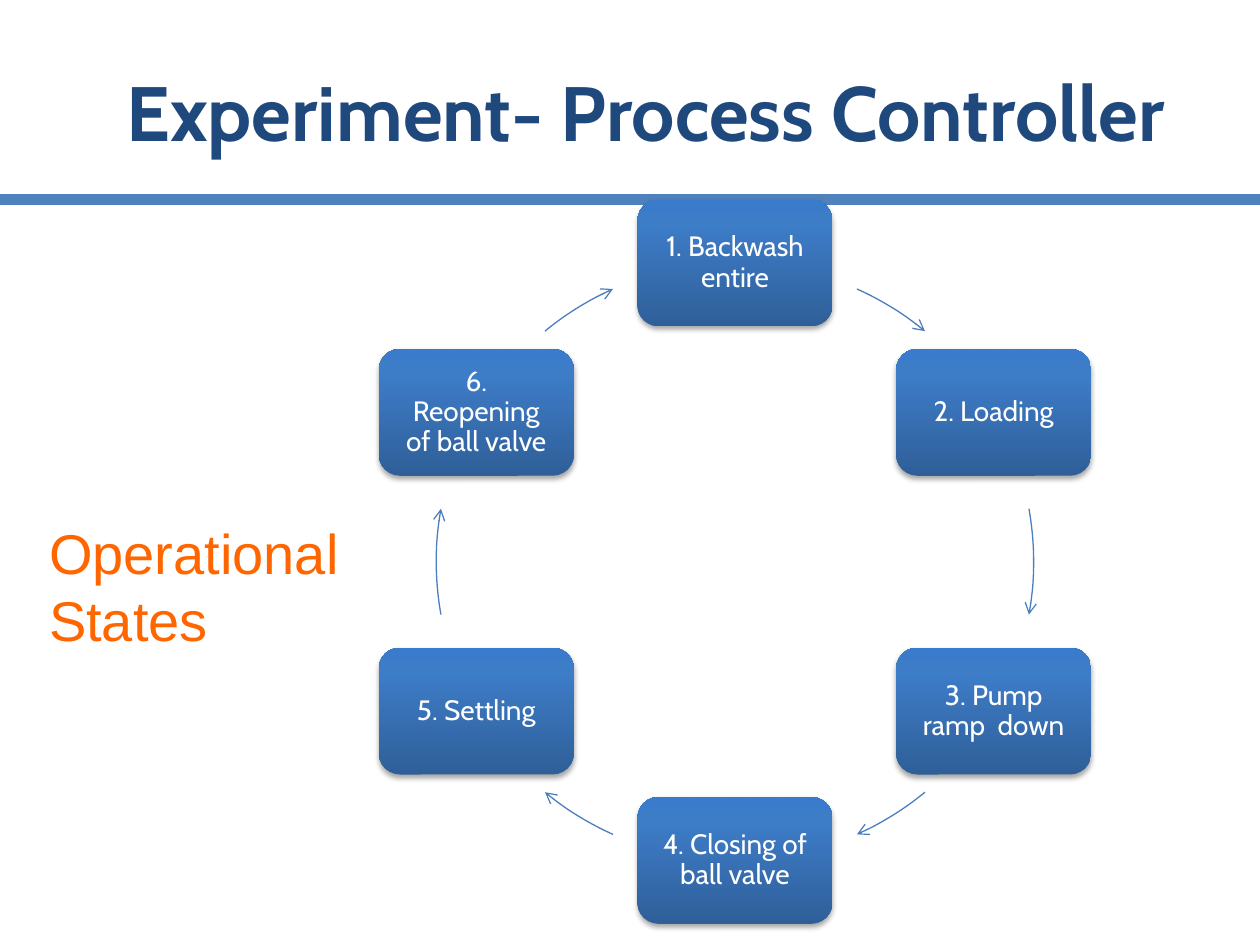
from math import cos, radians, sin

from lxml.etree import SubElement
from pptx import Presentation
from pptx.dml.color import RGBColor
from pptx.enum.shapes import MSO_CONNECTOR, MSO_SHAPE
from pptx.enum.text import MSO_ANCHOR, MSO_AUTO_SIZE, PP_ALIGN
from pptx.oxml.ns import qn
from pptx.util import Pt

COLORS = {
    "title": "1F497D", "rule": "4F81BD", "arrow": "4B7EBC",
    "label": "FF6600", "text": "FFFFFF", "shadow": "000000",
    "dark": "2F5F99", "mid": "3D7CC7", "top": "3A7CCB",
}
FADE = ((0, "dark"), (80, "mid"), (100, "top"))
STATES = (
    "1. Backwash entire", "2. Loading", "3. Pump ramp  down",
    "4. Closing of ball valve", "5. Settling", "6. Reopening of ball valve",
)
# Start and end of the arrow after each state, in degrees clockwise from the top
SPANS = ((24.1, 39.5), (79.8, 100.2), (140.5, 155.9),
         (204.1, 219.5), (259.8, 280.2), (320.5, 335.9))
MID_X, MID_Y, RADIUS = 420, 321, 170.7
BOX_W, BOX_H = 111.5, 72.5


def rgb(name):
    return RGBColor.from_string(COLORS[name])


def add(parent, tag, **attrs):
    return SubElement(parent, qn(tag), {k: str(v) for k, v in attrs.items()})


def style(para, font, size, color, bold=False):
    for run in para.runs:
        run.font.name = font
        run.font.size = Pt(size)
        run.font.bold = bold
        run.font.color.rgb = rgb(color)


def add_title(slide, text):
    title = slide.shapes.title
    title.left, title.top = Pt(36), Pt(18)
    title.width, title.height = Pt(666), Pt(90)
    frame = title.text_frame
    frame.text = text
    frame.vertical_anchor = MSO_ANCHOR.MIDDLE
    para = frame.paragraphs[0]
    para.alignment = PP_ALIGN.CENTER
    style(para, "Cabin", 44, "title", True)


def add_rule(slide, y):
    rule = slide.shapes.add_connector(
        MSO_CONNECTOR.STRAIGHT, Pt(0), Pt(y), Pt(720), Pt(y))
    rule.line.color.rgb = rgb("rule")
    rule.line.width = Pt(6)
    add(rule.element.spPr, "a:effectLst")


def add_fade(shape):
    """Fill the shape with the blue gradient and give it a soft shadow."""
    shape.line.fill.background()
    shape.shadow.inherit = False
    props = shape.element.spPr
    fade = add(props, "a:gradFill", rotWithShape=1)
    props.find(qn("a:ln")).addprevious(fade)
    stops = add(fade, "a:gsLst")
    for pos, name in FADE:
        stop = add(stops, "a:gs", pos=pos * 1000)
        add(stop, "a:srgbClr", val=COLORS[name])
    add(fade, "a:lin", ang=270 * 60000, scaled=0)
    shade = add(props.find(qn("a:effectLst")), "a:outerShdw",
                blurRad=Pt(3.1), dist=Pt(1.8), dir=90 * 60000, rotWithShape=0)
    tint = add(shade, "a:srgbClr", val=COLORS["shadow"])
    add(tint, "a:alpha", val=35000)


def add_state(slide, text, angle):
    x = MID_X + RADIUS * sin(radians(angle))
    y = MID_Y - RADIUS * cos(radians(angle))
    box = slide.shapes.add_shape(
        MSO_SHAPE.ROUNDED_RECTANGLE, Pt(x - BOX_W / 2), Pt(y - BOX_H / 2),
        Pt(BOX_W), Pt(BOX_H))
    add_fade(box)
    frame = box.text_frame
    frame.text = text
    frame.word_wrap = True
    frame.vertical_anchor = MSO_ANCHOR.MIDDLE
    frame.margin_left = frame.margin_right = Pt(8.7)
    frame.margin_top = frame.margin_bottom = Pt(8.7)
    para = frame.paragraphs[0]
    para.alignment = PP_ALIGN.CENTER
    para.line_spacing = 0.9
    para.space_after = Pt(5.6)
    style(para, "Cabin", 16, "text")


def add_arrow(slide, span):
    arc = slide.shapes.add_shape(
        MSO_SHAPE.ARC, Pt(MID_X - RADIUS), Pt(MID_Y - RADIUS),
        Pt(2 * RADIUS), Pt(2 * RADIUS))
    for i, angle in enumerate(span):
        # Arc angles start at the right; one degree is 0.6 adjustment units
        arc.adjustments[i] = (angle - 90) % 360 * 0.6
    arc.fill.background()
    arc.shadow.inherit = False
    arc.line.color.rgb = rgb("arrow")
    arc.line.width = Pt(0.75)
    add(arc.element.spPr.find(qn("a:ln")), "a:tailEnd", type="arrow")


def add_label(slide, text):
    label = slide.shapes.add_textbox(Pt(21), Pt(292.5), Pt(188.5), Pt(85))
    frame = label.text_frame
    frame.text = text
    frame.word_wrap = True
    frame.auto_size = MSO_AUTO_SIZE.SHAPE_TO_FIT_TEXT
    style(frame.paragraphs[0], "Arial", 32, "label")


def main():
    deck = Presentation()
    deck.slide_width, deck.slide_height = Pt(720), Pt(540)
    slide = deck.slides.add_slide(deck.slide_layouts[5])
    add_rule(slide, 114)
    add_title(slide, "Experiment- Process Controller")
    step = 360 / len(STATES)
    for i, (text, span) in enumerate(zip(STATES, SPANS)):
        add_state(slide, text, i * step)
        add_arrow(slide, span)
    add_label(slide, "Operational States")
    deck.save("out.pptx")


if __name__ == "__main__":
    main()
